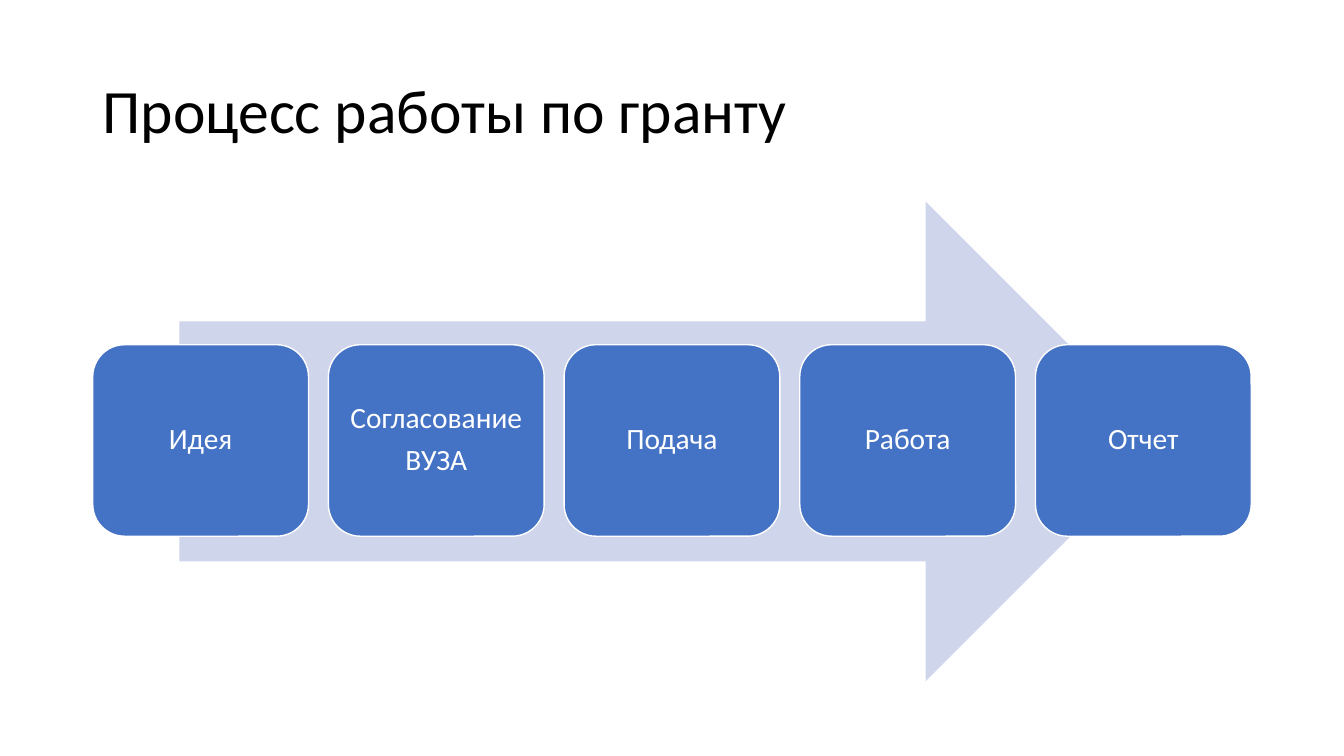
import pptx
import pptx.dml.color
import pptx.enum.shapes
import pptx.enum.text
import pptx.util

Inches = pptx.util.Inches
Pt = pptx.util.Pt
RGBColor = pptx.dml.color.RGBColor
Shape = pptx.enum.shapes.MSO_SHAPE
Align = pptx.enum.text.PP_ALIGN

BLACK = RGBColor(0x00, 0x00, 0x00)
WHITE = RGBColor(0xFF, 0xFF, 0xFF)
STEP_BLUE = RGBColor(0x44, 0x72, 0xC4)
ARROW_BLUE = RGBColor(0xCF, 0xD5, 0xEA)

STEPS = ["Идея", "Согласование\nВУЗА", "Подача", "Работа", "Отчет"]
FIRST_LEFT, LAST_LEFT = 0.92, 10.27
STEP_PITCH = (LAST_LEFT - FIRST_LEFT) / (len(STEPS) - 1)


class ProcessSlide:
    font_name = "Calibri"
    line_spacing = 0.9

    def __init__(self, slide):
        self.slide = slide

    def set_text(self, frame, text, size, color, align, inset_x, inset_y, space_after=0):
        """Fill a text frame, one paragraph for each line of text."""
        frame_format = {
            "text": text,
            "word_wrap": True,
            "vertical_anchor": pptx.enum.text.MSO_ANCHOR.MIDDLE,
            "margin_left": Inches(inset_x),
            "margin_right": Inches(inset_x),
            "margin_top": Inches(inset_y),
            "margin_bottom": Inches(inset_y),
        }
        for name, value in frame_format.items():
            setattr(frame, name, value)
        paragraph_format = {
            "alignment": align,
            "line_spacing": self.line_spacing,
            "space_after": Pt(space_after),
        }
        for paragraph in frame.paragraphs:
            for name, value in paragraph_format.items():
                setattr(paragraph, name, value)
            for run in paragraph.runs:
                run.font.name = self.font_name
                run.font.size = Pt(size)
                run.font.color.rgb = color

    def title(self, text, box):
        heading = self.slide.shapes.add_textbox(*map(Inches, box))
        self.set_text(heading.text_frame, text, 44, BLACK, Align.LEFT, 0.1, 0.05)

    def block(self, kind, box, fill):
        """Add a preset shape with a plain fill and no outline."""
        block = self.slide.shapes.add_shape(kind, *map(Inches, box))
        block.shadow.inherit = False
        block.fill.solid()
        block.fill.fore_color.rgb = fill
        block.line.fill.background()
        return block

    def step(self, text, left):
        step = self.block(Shape.ROUNDED_RECTANGLE, (left, 3.42, 2.14, 1.9), STEP_BLUE)
        step.line.color.rgb = WHITE
        step.line.width = Pt(1)
        # The rounded corners already inset the text by about 0.09
        self.set_text(step.text_frame, text, 21, WHITE, Align.CENTER, 0.09, 0.09, 7.35)


def main():
    presentation = pptx.Presentation()
    presentation.slide_width = Inches(13.33)
    presentation.slide_height = Inches(7.5)
    process = ProcessSlide(presentation.slides.add_slide(presentation.slide_layouts[6]))

    process.title("Процесс работы по гранту", (0.92, 0.4, 11.5, 1.45))
    process.block(Shape.RIGHT_ARROW, (1.78, 2, 9.78, 4.76), ARROW_BLUE)
    for index, text in enumerate(STEPS):
        process.step(text, FIRST_LEFT + index * STEP_PITCH)

    presentation.save("out.pptx")


if __name__ == "__main__":
    main()
